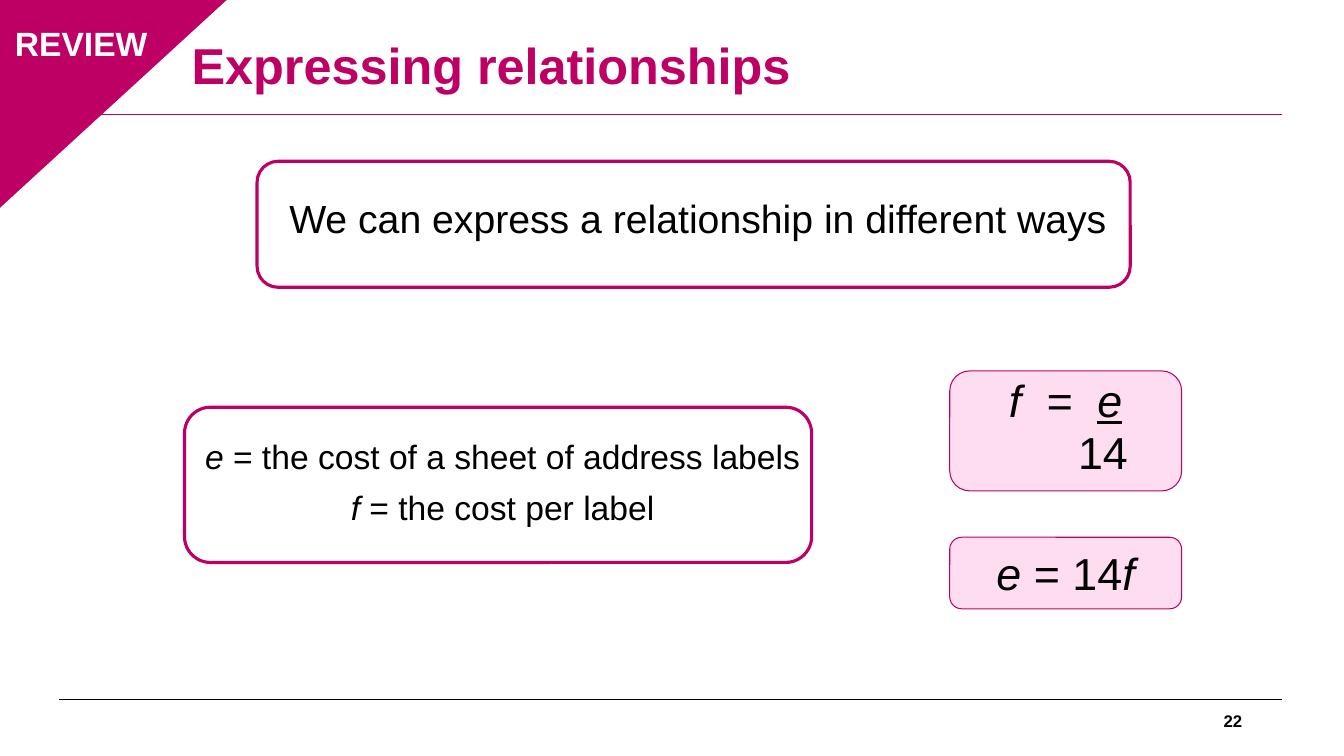
from dataclasses import dataclass

from lxml.etree import SubElement
from pptx import Presentation
from pptx.dml.color import RGBColor
from pptx.enum.shapes import MSO_CONNECTOR as Connector, MSO_SHAPE as Preset
from pptx.enum.text import MSO_ANCHOR as Anchor, PP_ALIGN as Align
from pptx.oxml.ns import qn
from pptx.shapes.autoshape import Shape
from pptx.slide import Slide
from pptx.text.text import TextFrame
from pptx.util import Inches, Pt


@dataclass(frozen=True)
class Theme:
    font: str = "Arial"
    accent: RGBColor = RGBColor(0xBE, 0x00, 0x64)
    pale: RGBColor = RGBColor(0xFF, 0xDD, 0xF1)
    ink: RGBColor = RGBColor(0, 0, 0)
    paper: RGBColor = RGBColor(255, 255, 255)
    title: int = 36
    formula: int = 32
    statement: int = 28
    label: int = 24
    number: int = 12


THEME = Theme()


@dataclass(frozen=True)
class Place:
    left: float
    top: float
    width: float
    height: float

    def lengths(self) -> tuple:
        return tuple(Inches(n) for n in (self.left, self.top, self.width, self.height))


@dataclass(frozen=True)
class Span:
    text: str
    italic: bool = False
    underline: bool = False


@dataclass(frozen=True)
class Style:
    size: int
    color: RGBColor = THEME.ink
    bold: bool = False
    align: Align = Align.CENTER
    anchor: Anchor = Anchor.TOP
    spaced: bool = False


@dataclass(frozen=True)
class Block:
    place: Place
    lines: list[list[Span]]
    style: Style


@dataclass(frozen=True)
class Frame:
    place: Place
    weight: float
    fill: RGBColor | None = None


@dataclass(frozen=True)
class Rule:
    left: float
    right: float
    top: float
    color: RGBColor


def write(frame: TextFrame, lines: list[list[Span]], style: Style) -> None:
    frame.word_wrap = True
    frame.vertical_anchor = style.anchor
    for index, line in enumerate(lines):
        para = frame.add_paragraph() if index else frame.paragraphs[0]
        para.alignment = style.align
        if style.spaced:
            para.line_spacing = Pt(31)
            para.space_after = Pt(6)
        for span in line:
            run = para.add_run()
            run.text = span.text
            font = run.font
            font.name, font.size, font.bold = THEME.font, Pt(style.size), style.bold
            font.italic, font.underline = span.italic, span.underline
            font.color.rgb = style.color


def add_block(page: Slide, block: Block) -> None:
    box = page.shapes.add_textbox(*block.place.lengths())
    write(box.text_frame, block.lines, block.style)


def add_frame(page: Slide, frame: Frame, preset: Preset = Preset.ROUNDED_RECTANGLE) -> Shape:
    box = page.shapes.add_shape(preset, *frame.place.lengths())
    box.shadow.inherit = False
    if frame.fill is None:
        box.fill.background()
    else:
        box.fill.solid()
        box.fill.fore_color.rgb = frame.fill
    box.line.color.rgb = THEME.accent
    box.line.width = Pt(frame.weight)
    return box


def add_rule(page: Slide, rule: Rule) -> None:
    line = page.shapes.add_connector(
        Connector.STRAIGHT, Inches(rule.left), Inches(rule.top), Inches(rule.right), Inches(rule.top))
    line.line.color.rgb = rule.color
    line.line.width = Pt(0.75)
    SubElement(line._element.spPr, qn("a:effectLst"))


RULES = [Rule(0.59, 12.72, 6.94, THEME.ink), Rule(0.59, 12.72, 1.14, THEME.accent)]
CORNER = Frame(Place(-0.03, -0.02, 2.29, 2.1), 1, THEME.accent)
OUTLINES = [Frame(Place(2.55, 1.6, 8.66, 1.25), 2.25), Frame(Place(1.83, 4.04, 6.22, 1.54), 2.25)]

TITLE = Block(Place(1.8, 0.12, 8.69, 1.11), [[Span("Expressing relationships")]],
              Style(THEME.title, THEME.accent, True, Align.LEFT, Anchor.MIDDLE))
BLOCKS = [
    Block(Place(9.42, 6.95, 3, 0.4), [[Span("22")]],
          Style(THEME.number, bold=True, align=Align.RIGHT, anchor=Anchor.MIDDLE)),
    Block(Place(-0.02, 0.18, 1.65, 0.5), [[Span("REVIEW")]],
          Style(THEME.label, THEME.paper, True)),
    Block(Place(2.59, 1.88, 8.66, 0.57),
          [[Span("We can express a relationship in different ways")]], Style(THEME.statement)),
    Block(Place(1.65, 4.24, 6.67, 1.05),
          [[Span("e", True), Span(" = the cost of a sheet of address labels")],
           [Span("f", True), Span(" = the cost per label")]],
          Style(THEME.label, spaced=True)),
]
QUOTIENT = Block(Place(9.42, 3.68, 2.3, 1.19),
                 [[Span("f  =  ", True), Span("e", True, True)], [Span("14")]],
                 Style(THEME.formula, anchor=Anchor.MIDDLE, spaced=True))
PRODUCT = Block(Place(9.42, 5.33, 2.3, 0.71),
                [[Span("e", True), Span(" = 14"), Span("f", True)]],
                Style(THEME.formula, anchor=Anchor.MIDDLE))


def main() -> None:
    deck = Presentation()
    deck.slide_width, deck.slide_height = Inches(13.33), Inches(7.5)
    page = deck.slides.add_slide(deck.slide_layouts[5])

    # Rules and corner flag
    for rule in RULES:
        add_rule(page, rule)
    corner = add_frame(page, CORNER, Preset.ISOSCELES_TRIANGLE)
    corner.adjustments[0] = 0
    corner._element.spPr.xfrm.set("flipV", "1")

    # Title
    title = page.shapes.title
    title.left, title.top, title.width, title.height = TITLE.place.lengths()
    write(title.text_frame, TITLE.lines, TITLE.style)
    title.text_frame.paragraphs[0].line_spacing = 0.9

    # Formulas
    for formula in (QUOTIENT, PRODUCT):
        box = add_frame(page, Frame(formula.place, 0.75, THEME.pale))
        write(box.text_frame, formula.lines, formula.style)
        if formula is QUOTIENT:
            # The denominator sits under the numerator
            denominator = box.text_frame.paragraphs[1]
            denominator._p.get_or_add_pPr().set("marL", str(Inches(0.74)))

    # Outlined statements and remaining text
    for outline in OUTLINES:
        add_frame(page, outline)
    for block in BLOCKS:
        add_block(page, block)

    deck.save("out.pptx")


if __name__ == "__main__":
    main()
